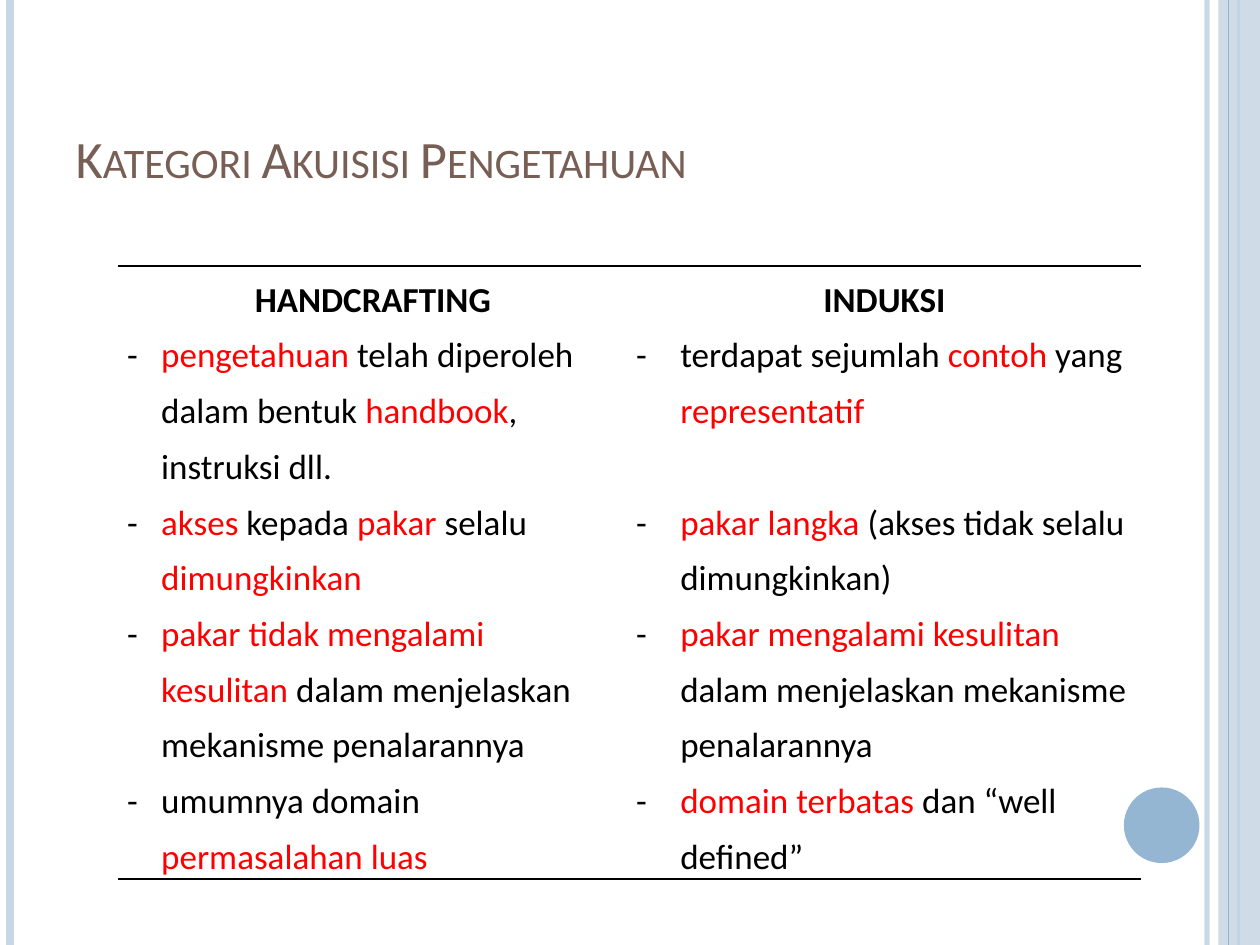
from lxml import etree
from pptx import Presentation
from pptx import util as u
from pptx.dml.color import RGBColor
from pptx.enum import shapes, text
from pptx.oxml.ns import qn

PALE = RGBColor(0xC8, 0xD7, 0xE5)
BLUE = RGBColor(0x94, 0xB6, 0xD2)
BROWN = RGBColor(0x77, 0x5F, 0x55)
BLACK = RGBColor(0, 0, 0)
RED = RGBColor(0xFF, 0, 0)
FONT = "Calibri"
COLUMNS, ROWS = 100, 75
LINE_ROWS = 4.4

HEADINGS = ["HANDCRAFTING", "INDUKSI"]
COMPARISON = [
    (3, "*pengetahuan *telah diperoleh dalam bentuk *handbook*, instruksi dll.",
     "terdapat sejumlah *contoh* yang *representatif*"),
    (2, "*akses *kepada *pakar *selalu *dimungkinkan*",
     "*pakar langka *(akses tidak selalu dimungkinkan)"),
    (3, "*pakar tidak mengalami kesulitan *dalam menjelaskan mekanisme penalarannya",
     "*pakar mengalami kesulitan *dalam menjelaskan mekanisme penalarannya"),
    (2, "umumnya domain *permasalahan luas*",
     "*domain terbatas *dan “well defined”"),
]


class SlideBuilder:
    """Holds the style and the current slide, measured on a grid of 100 by 75."""

    def __init__(self, deck):
        self.slide = deck.slides.add_slide(deck.slide_layouts[5])
        self.cell_width = deck.slide_width / COLUMNS
        self.cell_height = deck.slide_height / ROWS

    def x(self, columns):
        return u.Emu(round(columns * self.cell_width))

    def y(self, rows):
        return u.Emu(round(rows * self.cell_height))

    def box(self, left, top, width, height):
        return self.x(left), self.y(top), self.x(width), self.y(height)

    def fade(self, drawn, opacity):
        for color in drawn._element.spPr.iter(qn("a:srgbClr")):
            etree.SubElement(color, qn("a:alpha"), val=str(opacity * 1000))

    def stripe(self, column, color, width, opacity=100):
        stripe = self.slide.shapes.add_connector(
            shapes.MSO_CONNECTOR.STRAIGHT, self.x(column), 0, self.x(column), self.y(ROWS))
        stripe.line.color.rgb = color
        stripe.line.width = u.Pt(width)
        etree.SubElement(stripe._element.spPr, qn("a:effectLst"))
        if opacity < 100:
            self.fade(stripe, opacity)

    def shape(self, kind, place, color, opacity=100):
        shape = self.slide.shapes.add_shape(kind, *self.box(*place))
        shape.shadow.inherit = False
        shape.fill.solid()
        shape.fill.fore_color.rgb = color
        shape.line.fill.background()
        if opacity < 100:
            self.fade(shape, opacity)

    def title(self, wording, place):
        title = self.slide.shapes.title
        title.left, title.top, title.width, title.height = self.box(*place)
        frame = title.text_frame
        frame.text = wording
        frame.auto_size = text.MSO_AUTO_SIZE.NONE
        frame.vertical_anchor = text.MSO_ANCHOR.BOTTOM
        paragraph = frame.paragraphs[0]
        paragraph.alignment = text.PP_ALIGN.LEFT
        paragraph.font.name, paragraph.font.size = FONT, u.Pt(30)
        paragraph.font.color.rgb = BROWN
        paragraph.runs[0]._r.get_or_add_rPr().set("cap", "small")

    def borders(self, cell, ruled):
        properties = cell._tc.get_or_add_tcPr()
        for position, side in enumerate(("lnL", "lnR", "lnT", "lnB")):
            border = etree.Element(qn(f"a:{side}"), w=str(u.Pt(1)))
            if side == ruled:
                fill = etree.SubElement(border, qn("a:solidFill"))
                etree.SubElement(fill, qn("a:srgbClr"), val=str(BLACK))
            else:
                etree.SubElement(border, qn("a:noFill"))
            properties.insert(position, border)

    def cell_text(self, cell, wording, heading=False):
        cell.margin_left = cell.margin_right = u.Inches(0.07)
        paragraph = cell.text_frame.paragraphs[0]
        paragraph.line_spacing = 1.3
        paragraph.font.name, paragraph.font.size = FONT, u.Pt(20)
        paragraph.font.bold = heading
        if heading:
            paragraph.alignment = text.PP_ALIGN.CENTER
        for position, part in enumerate(wording.split("*")):
            if part:
                run = paragraph.add_run()
                run.text = part
                run.font.color.rgb = RED if position % 2 else BLACK

    def table(self, left, top, widths, headings, comparison):
        line_counts = [1] + [lines for lines, *_ in comparison]
        place = self.box(left, top, sum(widths), sum(line_counts) * LINE_ROWS)
        table = self.slide.shapes.add_table(len(line_counts), len(widths), *place).table
        table.first_row = table.horz_banding = False
        for column, width in zip(table.columns, widths):
            column.width = self.x(width)
        for row, lines in zip(table.rows, line_counts):
            row.height = self.y(lines * LINE_ROWS)
        ruled = {0: "lnT", len(comparison): "lnB"}
        for index, row in enumerate(table.rows):
            for cell in row.cells:
                cell.margin_top = cell.margin_bottom = 0
                cell.fill.background()
                self.borders(cell, ruled.get(index))
        for side, heading in enumerate(headings):
            first = table.cell(0, 2 * side)
            first.merge(table.cell(0, 2 * side + 1))
            self.cell_text(first, heading, heading=True)
        for index, (_, *points) in enumerate(comparison, 1):
            for side, point in enumerate(points):
                self.cell_text(table.cell(index, 2 * side), "-")
                self.cell_text(table.cell(index, 2 * side + 1), point)


def main():
    deck = Presentation()
    deck.slide_width, deck.slide_height = u.Inches(10), u.Inches(7.5)
    page = SlideBuilder(deck)
    page.stripe(95.8, PALE, 3, 93)
    page.stripe(0.8, PALE, 4.5)
    page.stripe(98.3, BLUE, 1.5)
    page.shape(shapes.MSO_SHAPE.RECTANGLE, (96.7, 0, 3.3, ROWS), PALE, 87)
    page.stripe(97.5, BLUE, 0.75)
    page.shape(shapes.MSO_SHAPE.OVAL, (89.2, 62.5, 6, 6), BLUE)
    page.title("Kategori Akuisisi Pengetahuan", (5, 3, 81.7, 12.5))
    page.table(9.4, 21.1, (2.7, 37.7, 3.5, 37.3), HEADINGS, COMPARISON)
    deck.save("out.pptx")


if __name__ == "__main__":
    main()
